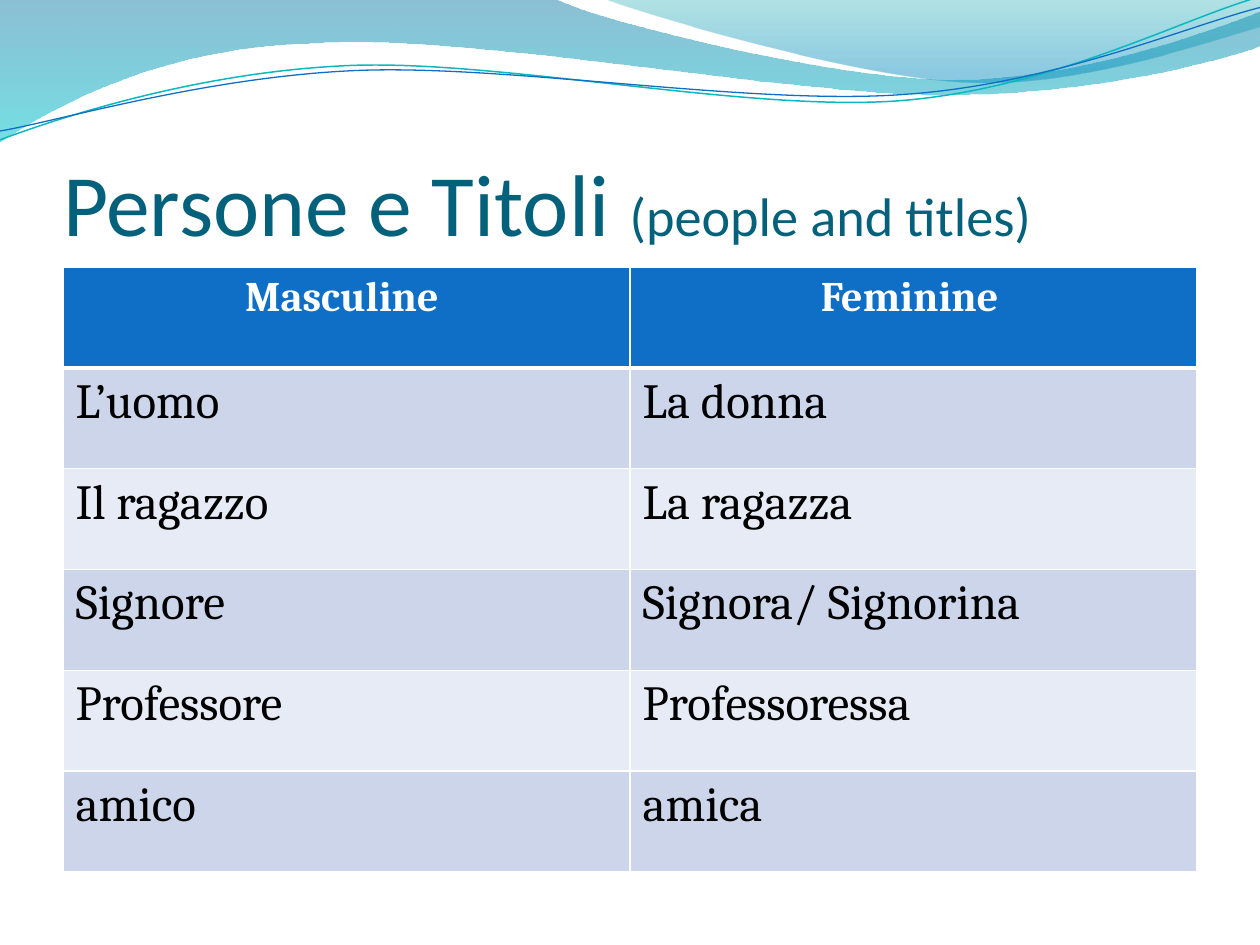
from math import cos, radians, sin

from pptx import Presentation
from pptx.util import Inches, Pt
from pptx.dml.color import RGBColor
from pptx.enum.text import PP_ALIGN, MSO_ANCHOR
from pptx.oxml.ns import qn
from lxml.etree import SubElement

HUES = {"title": "04617B", "head": "0F6FC6", "odd": "CCD5EA", "even": "E7EBF5",
        "white": "FFFFFF", "black": "000000", "teal": "0AB8BF",
        "deep": "0074A1", "aqua": "00C6CF", "sea": "00A1A9", "sky": "008BBF"}


def write(frame, text, size=28, font="Cambria", hue="black", bold=False, align=PP_ALIGN.LEFT):
    para = frame.paragraphs[0]
    para.alignment = align
    run = para.add_run()
    run.text = text
    run.font.size = Pt(size)
    run.font.name = font
    run.font.bold = bold
    run.font.color.rgb = RGBColor.from_string(HUES[hue])


def draw(start, curves, closed, turn=0, hub=(0, 0)):
    flat = list(start) + [value for curve in curves for value in curve]
    wide, high = cos(radians(turn)), sin(radians(turn))
    points = []
    for x, y in zip(flat[::2], flat[1::2]):
        x, y = x - hub[0], y - hub[1]
        points.append((Inches(hub[0] + x * wide + y * high), Inches(hub[1] - x * high + y * wide)))
    pen = slide.shapes.build_freeform(*points[0])
    pen.add_line_segments(points[1:], close=closed)
    shape = pen.convert_to_shape()
    shape.rotation = turn
    shape.shadow.inherit = False
    nodes = iter(list(shape._element.iter(qn("a:lnTo"))))
    for curve in curves:
        group = [next(nodes) for _ in range(len(curve) // 2)]
        if len(group) == 3:
            bend = group[0].makeelement(qn("a:cubicBezTo"))
            group[0].addprevious(bend)
            for node in group:
                bend.append(node[0])
                node.getparent().remove(node)
    return shape


deck = Presentation()
deck.slide_width, deck.slide_height = Inches(10), Inches(7.5)
slide = deck.slides.add_slide(deck.slide_layouts[5])

waves = [
    ((0, 0), [(4.4, -0.01), (4.76, 0.17, 6.64, 0.63, 7.58, 0.63),
              (8.53, 0.63, 9.58, 0.26, 10, 0.09), (10.01, 0.36),
              (9.83, 0.44, 8.7, 0.76, 7.46, 0.75), (6.22, 0.75, 3.82, 0.28, 2.57, 0.34),
              (1.29, 0.36, 0.46, 0.83, -0.01, 1.13), (0, 0)],
     [("deep", 0, 45), ("aqua", 1, 55)]),
    ((4.79, -0.01), [(5.09, 0.11, 6.82, 0.62, 7.69, 0.65),
                     (8.56, 0.69, 9.61, 0.32, 10, 0.21), (10, 0), (4.79, -0.01)],
     [("sea", 0, 30), ("sky", 0.8, 45)]),
]
for start, curves, stops in waves:
    wave = draw(start, curves, True)
    wave.line.fill.background()
    wave.fill.gradient()
    wave.fill.gradient_angle = 270
    for stop, (hue, place, alpha) in zip(wave.fill.gradient_stops, stops):
        stop.color.rgb = RGBColor.from_string(HUES[hue])
        stop.position = place
    for tint, (hue, place, alpha) in zip(wave._element.spPr.iter(qn("a:srgbClr")), stops):
        SubElement(tint, qn("a:alpha"), val=str(alpha * 1000))

lines = [
    ((0, 1.11), [(0.48, 0.93, 1.58, 0.57, 2.77, 0.52), (3.95, 0.47, 5.93, 0.89, 7.13, 0.8),
                 (8.33, 0.71, 9.38, 0.15, 9.98, -0.02)], (4.99, 0.58), "teal", 0.85),
    ((0, 1.04), [(0.47, 0.96, 1.64, 0.61, 2.83, 0.56), (4.03, 0.51, 5.97, 0.84, 7.17, 0.75),
                 (8.36, 0.67, 9.41, 0.21, 10, 0.06)], (5, 0.59), "head", 0.75),
]
for start, curves, hub, hue, width in lines:
    line = draw(start, curves, False, turn=-2.7, hub=hub)
    line.fill.background()
    line.line.color.rgb = RGBColor.from_string(HUES[hue])
    line.line.width = Pt(width)

title = slide.shapes.title
slide.shapes._spTree.append(title._element)
title.left, title.top = Inches(0.5), Inches(0.77)
title.width, title.height = Inches(9), Inches(1.25)
frame = title.text_frame
frame.vertical_anchor = MSO_ANCHOR.BOTTOM
frame.margin_left = frame.margin_right = frame.margin_bottom = 0
frame.margin_top = Inches(0.05)
write(frame, "Persone e Titoli ", size=50, font="Calibri", hue="title")
write(frame, "(people and titles)", size=31, font="Calibri", hue="title")

words = [("Masculine ", "Feminine"), ("L’uomo", "La donna"), ("Il ragazzo", "La ragazza"),
         ("Signore", "Signora/ Signorina"), ("Professore", "Professoressa"), ("amico", "amica")]
table = slide.shapes.add_table(len(words), 2, Inches(0.5), Inches(2.12), Inches(9), Inches(4.8)).table
for r, row in enumerate(words):
    for c, word in enumerate(row):
        cell = table.cell(r, c)
        for side in "LRTB":
            thick = (r, side) in ((0, "B"), (1, "T"))
            edge = SubElement(cell._tc.get_or_add_tcPr(), qn("a:ln" + side), w=str(Pt(3 if thick else 1)))
            SubElement(SubElement(edge, qn("a:solidFill")), qn("a:srgbClr"), val=HUES["white"])
        cell.fill.solid()
        shade = "head" if r == 0 else "odd" if r % 2 else "even"
        cell.fill.fore_color.rgb = RGBColor.from_string(HUES[shade])
        if r:
            write(cell.text_frame, word)
        else:
            write(cell.text_frame, word, size=24, hue="white", bold=True, align=PP_ALIGN.CENTER)
write(table.cell(0, 1).text_frame, " ", size=20, hue="white", bold=True, align=PP_ALIGN.CENTER)

deck.save("out.pptx")
